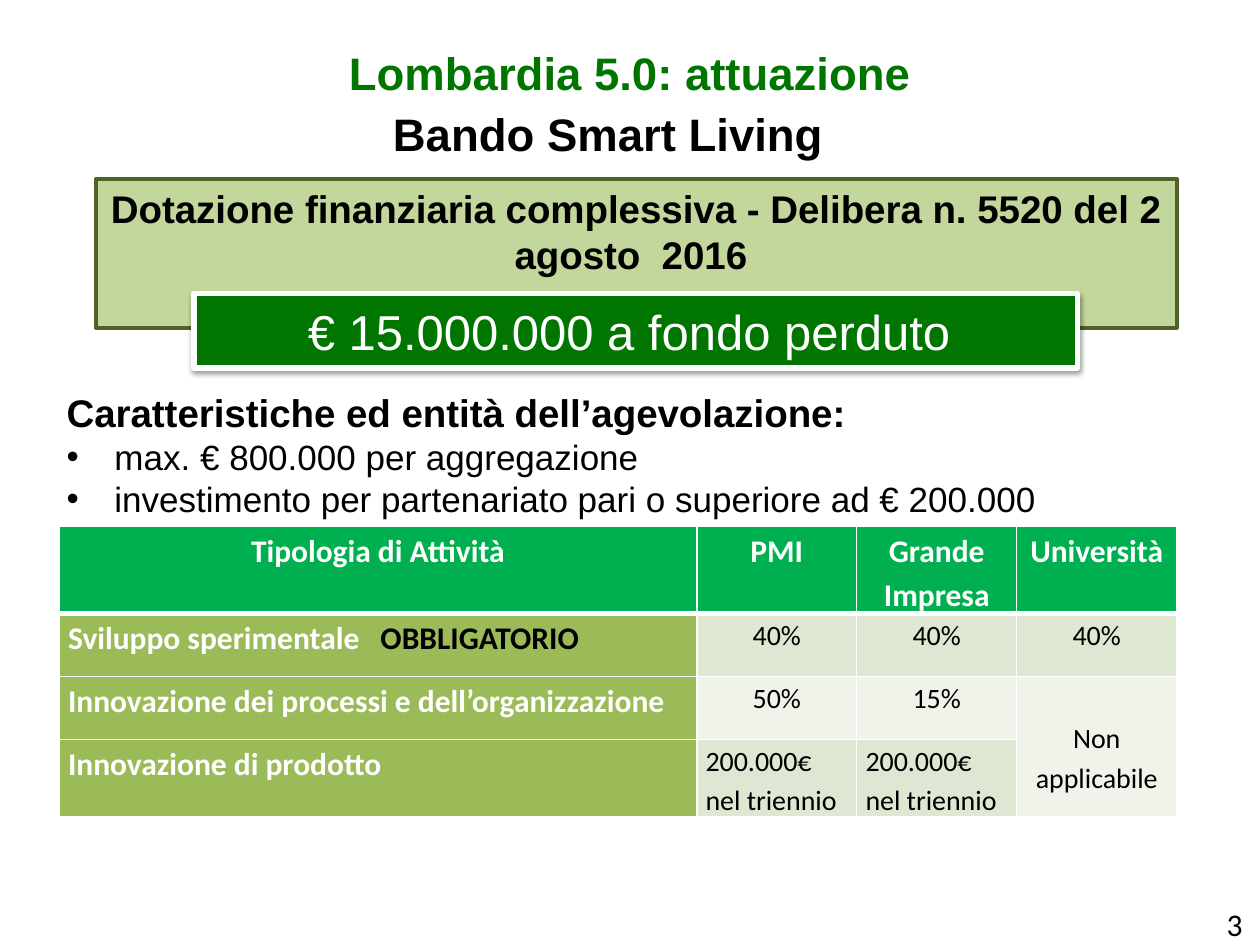
from dataclasses import dataclass

import lxml.etree
import pptx
import pptx.dml.color
import pptx.enum.shapes
import pptx.enum.text
import pptx.oxml
import pptx.oxml.ns
import pptx.util

Inches = pptx.util.Inches
Pt = pptx.util.Pt
ALIGN = pptx.enum.text.PP_ALIGN
ANCHOR = pptx.enum.text.MSO_ANCHOR
RECT = pptx.enum.shapes.MSO_SHAPE.RECTANGLE
qn = pptx.oxml.ns.qn
SPACE = pptx.oxml.ns.nsdecls("a")

WHITE, BLACK, GREEN = "FFFFFF", "000000", "007500"
HEAD, SIDE, DARK, LIGHT = "00B050", "9BBB59", "DEE7D1", "EFF3EA"


@dataclass
class Label:
    text: str
    box: tuple[float, float, float, float]
    size: float
    color: str = BLACK
    face: str = "Arial"
    bold: bool = True
    align: ALIGN = ALIGN.LEFT


@dataclass
class Panel:
    text: str
    box: tuple[float, float, float, float]
    size: float
    color: str
    bold: bool
    fill: str
    line: str
    width: float
    anchor: ANCHOR


@dataclass
class Row:
    texts: tuple[str, ...]
    height: float
    fills: tuple[str, str]
    align: ALIGN = ALIGN.CENTER


def tint(color: str) -> pptx.dml.color.RGBColor:
    return pptx.dml.color.RGBColor.from_string(color)


def write(frame, text: str, *, size: float, color: str = BLACK, face: str = "Arial",
          bold: bool = False, align: ALIGN = ALIGN.LEFT, space: float = 1,
          bullet: str = "", tab: float = 0, join: bool = False) -> None:
    para = frame.paragraphs[-1]
    if para.runs and not join:
        para = frame.add_paragraph()
    props = para._p.get_or_add_pPr()
    if bullet:
        props.set("marL", str(Inches(0.38)))
        props.set("indent", str(-Inches(0.38)))
        props.append(pptx.oxml.parse_xml(f'<a:buFont {SPACE} typeface="Arial"/>'))
        props.append(pptx.oxml.parse_xml(f'<a:buChar {SPACE} char="{bullet}"/>'))
    if tab:
        props.append(pptx.oxml.parse_xml(
            f'<a:tabLst {SPACE}><a:tab pos="{Inches(tab)}" algn="l"/></a:tabLst>'))
    para.alignment = align
    para.line_spacing = space
    run = para.add_run()
    run.text = text
    font = run.font
    font.size, font.bold, font.name = Pt(size), bold, face
    font.color.rgb = tint(color)


def add_box(shapes, box: tuple[float, float, float, float]):
    frame = shapes.add_textbox(*map(Inches, box)).text_frame
    frame.word_wrap = True
    return frame


def add_label(shapes, item: Label) -> None:
    write(add_box(shapes, item.box), item.text, size=item.size, color=item.color,
          face=item.face, bold=item.bold, align=item.align)


def add_panel(shapes, item: Panel):
    shape = shapes.add_shape(RECT, *map(Inches, item.box))
    shape.shadow.inherit = False
    shape.fill.solid()
    shape.fill.fore_color.rgb = tint(item.fill)
    shape.line.color.rgb = tint(item.line)
    shape.line.width = Pt(item.width)
    frame = shape.text_frame
    frame.word_wrap = True
    frame.vertical_anchor = item.anchor
    write(frame, item.text, size=item.size, color=item.color, bold=item.bold,
          align=ALIGN.CENTER)
    return shape


def add_shade(shape) -> None:
    effects = shape._element.spPr.find(qn("a:effectLst"))
    effects.append(pptx.oxml.parse_xml(
        f'<a:outerShdw {SPACE} blurRad="{Pt(3.1)}" dist="{Pt(1.6)}" dir="5400000" '
        f'rotWithShape="0"><a:srgbClr val="{BLACK}"><a:alpha val="38000"/>'
        '</a:srgbClr></a:outerShdw>'))


def style_cell(cell, fill: str, top: float, base: float) -> None:
    cell.margin_left = cell.margin_right = Inches(0.07)
    cell.margin_top = cell.margin_bottom = 0
    cell.fill.solid()
    cell.fill.fore_color.rgb = tint(fill)
    props = cell._tc.get_or_add_tcPr()
    sides = (("lnL", 1), ("lnR", 1), ("lnT", top), ("lnB", base))
    for spot, (name, width) in enumerate(sides):
        props.insert(spot, pptx.oxml.parse_xml(
            f'<a:{name} {SPACE} w="{Pt(width)}"><a:solidFill>'
            f'<a:srgbClr val="{WHITE}"/></a:solidFill></a:{name}>'))


def add_grid(shapes, rows: list[Row], widths: list[float]):
    grid = shapes.add_table(
        len(rows), len(widths), Inches(0.47), Inches(4.18),
        Inches(sum(widths)), Inches(sum(row.height for row in rows))).table
    grid.horz_banding = False
    for col, width in zip(grid.columns, widths):
        col.width = Inches(width)
    for r, row in enumerate(rows):
        grid.rows[r].height = Inches(row.height)
        for c, text in enumerate(row.texts):
            cell = grid.cell(r, c)
            strong = r == 0 or c == 0
            style_cell(cell, row.fills[c > 0], 3 if r == 1 else 1, 3 if r == 0 else 1)
            if text:
                write(cell.text_frame, text, size=18 if strong else 16,
                      color=WHITE if strong else BLACK, face="Calibri", bold=strong,
                      align=ALIGN.LEFT if r and c == 0 else row.align,
                      space=1.15, tab=2.48 if "\t" in text else 0)
    return grid


LABELS = [
    Label("Lombardia 5.0: attuazione", (1.02, 0.31, 7.96, 0.54), 26, GREEN,
          align=ALIGN.CENTER),
    Label("Bando Smart Living", (3.02, 0.79, 5.2, 0.54), 26),
    Label("3", (7.63, 7.13, 2.33, 0.4), 18, face="Calibri", bold=False,
          align=ALIGN.RIGHT),
]
FUND = Panel("Dotazione finanziaria complessiva - Delibera n. 5520 del 2 agosto  2016 ",
             (0.76, 1.42, 8.58, 1.18), 22, BLACK, True, "C3D69B", "4F6228", 2.25,
             ANCHOR.TOP)
GRANT = Panel("€ 15.000.000 a fondo perduto ", (1.54, 2.33, 7.01, 0.59), 28, WHITE,
              False, GREEN, WHITE, 3, ANCHOR.MIDDLE)
POINTS = ["max. € 800.000 per aggregazione",
          "investimento per partenariato pari o superiore ad € 200.000"]
LIMIT = "200.000€ nel triennio"
ROWS = [
    Row(("Tipologia di Attività", "PMI", "Grande Impresa", "Università"), 0.55,
        (HEAD, HEAD)),
    Row(("Sviluppo sperimentale\t", "40%", "40%", "40%"), 0.5, (SIDE, DARK)),
    Row(("Innovazione dei processi e dell’organizzazione", "50%", "15%",
         "Non applicabile"), 0.5, (SIDE, LIGHT)),
    Row(("Innovazione di prodotto", LIMIT, LIMIT, ""), 0.55, (SIDE, DARK), ALIGN.LEFT),
]


def main() -> None:
    deck = pptx.Presentation()
    deck.slide_width, deck.slide_height = Inches(10), Inches(7.5)
    shapes = deck.slides.add_slide(deck.slide_layouts[6]).shapes
    for item in LABELS:
        add_label(shapes, item)
    group = shapes.add_group_shape()
    add_panel(group.shapes, FUND)
    add_shade(add_panel(group.shapes, GRANT))

    frame = add_box(shapes, (0.43, 3.04, 9.21, 1.45))
    write(frame, "Caratteristiche ed entità dell’agevolazione:", size=22, bold=True)
    for point in POINTS:
        write(frame, point, size=20, bullet="•")

    grid = add_grid(shapes, ROWS, [5.06] + [1.27] * 3)
    write(grid.cell(1, 0).text_frame, "OBBLIGATORIO", size=18, face="Calibri",
          bold=True, space=1.15, join=True)
    grid.cell(2, 3).merge(grid.cell(3, 3))
    grid.cell(2, 3).margin_top = Inches(0.32)
    deck.save("out.pptx")


if __name__ == "__main__":
    main()
